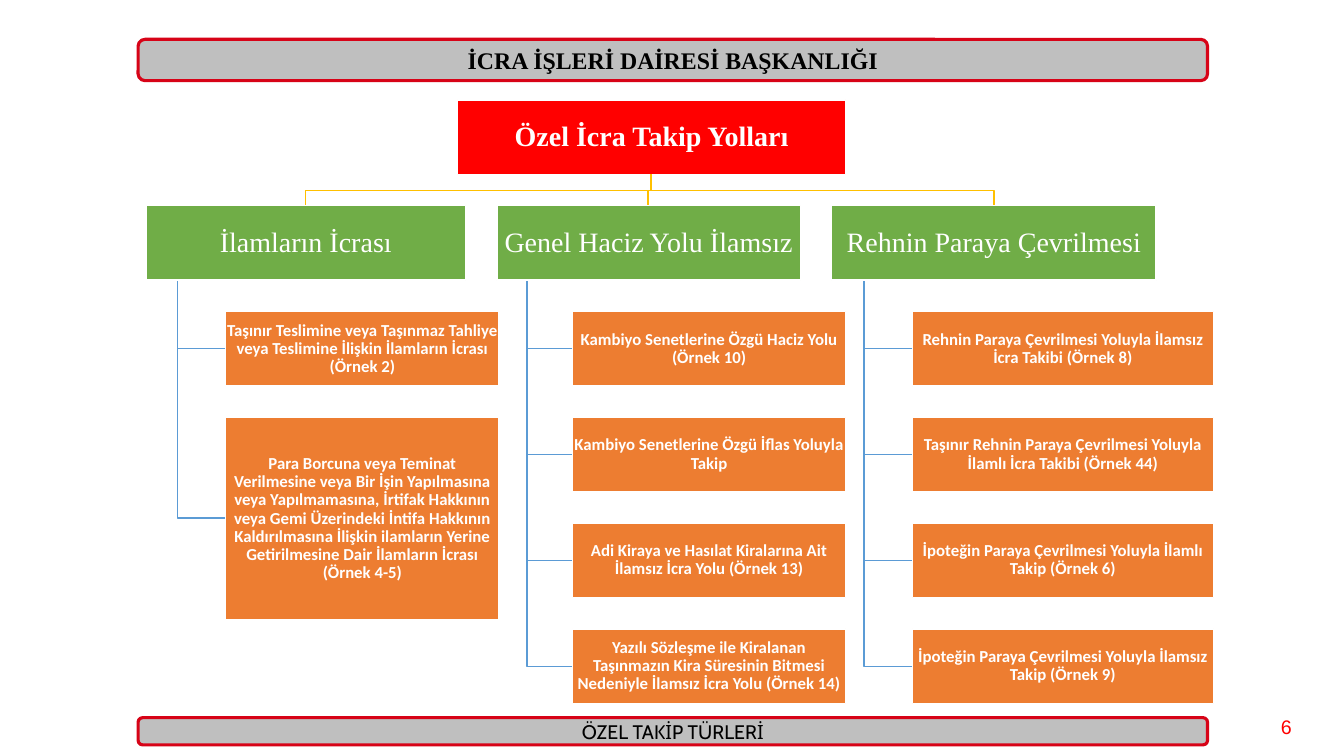
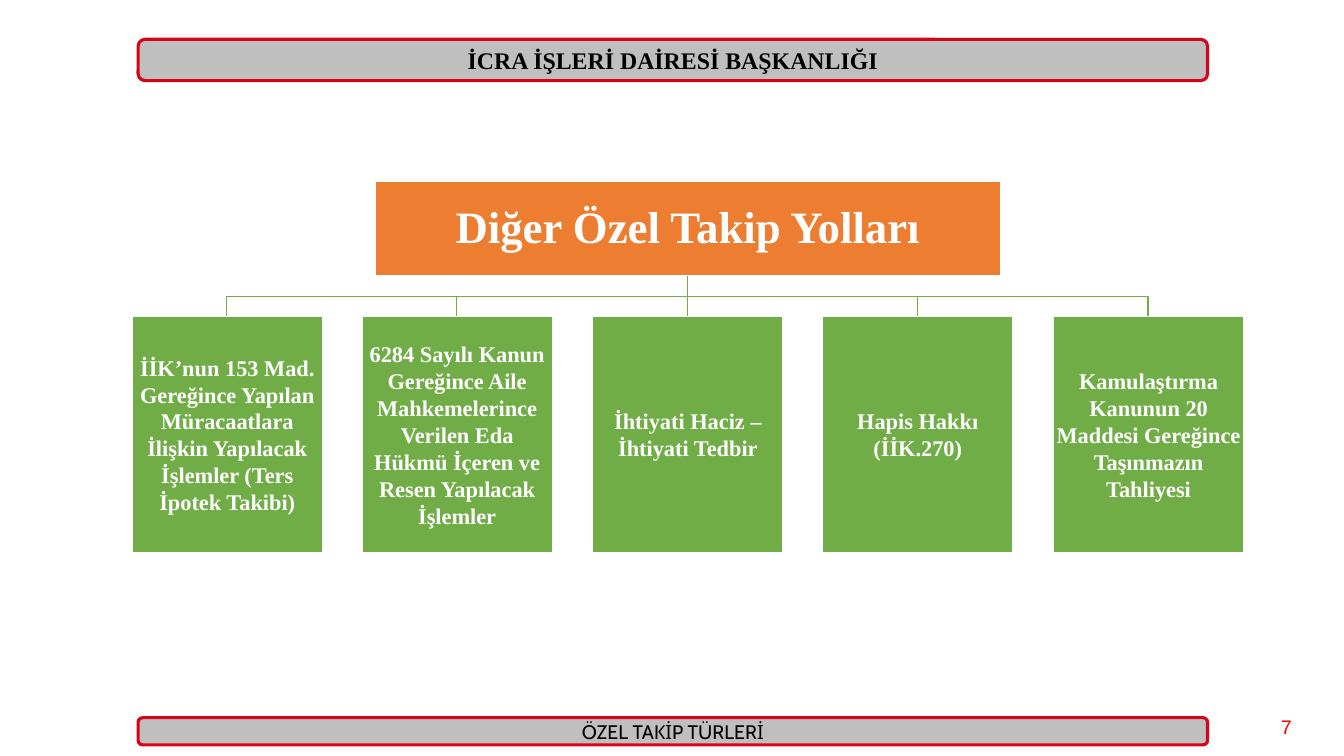
from lxml import etree
from pptx import Presentation
from pptx.dml.color import RGBColor
from pptx.enum.shapes import MSO_CONNECTOR, MSO_SHAPE
from pptx.enum.text import MSO_ANCHOR, MSO_AUTO_SIZE, PP_ALIGN
from pptx.oxml.ns import qn
from pptx.util import Emu, Pt

RECT, ROUND = MSO_SHAPE.RECTANGLE, MSO_SHAPE.ROUNDED_RECTANGLE
STRAIGHT = MSO_CONNECTOR.STRAIGHT
TOP, MIDDLE = MSO_ANCHOR.TOP, MSO_ANCHOR.MIDDLE
LEFT, CENTER = PP_ALIGN.LEFT, PP_ALIGN.CENTER
NO_FIT = MSO_AUTO_SIZE.NONE

COLORS = {
    "white": "FFFFFF", "black": "000000", "gray": "BFBFBF",
    "crimson": "D70317", "red": "FF0000", "green": "70AD47",
    "orange": "ED7D31", "gold": "FFC000", "blue": "5B9BD5",
}
SERIF, SANS = "Times New Roman", "Calibri"
SLIDE_W, SLIDE_H = Emu(12192000), Emu(6858000)

BANDS = [
    ("İCRA İŞLERİ DAİRESİ BAŞKANLIĞI", (137, 39, 1061, 41), SERIF, 17, True),
    ("ÖZEL TAKİP TÜRLERİ", (137, 712, 1061, 27), "Cabin", 14, False),
]

METHODS_TITLE = "Özel İcra Takip Yolları"
METHODS_ROOT = (454, 99, 385, 74)
HEAD_Y, ROW_H, ROW_GAP = 204, 74, 31
TALL_H = 201
METHODS = [
    {"head": "İlamların İcrası", "x": 145, "w": 317, "leaf_x": 224, "leaf_w": 271, "leaves": [
        ("Taşınır Teslimine veya Taşınmaz Tahliye veya Teslimine İlişkin "
         "İlamların İcrası (Örnek 2)", ROW_H),
        ("Para Borcuna veya Teminat Verilmesine veya Bir İşin Yapılmasına veya "
         "Yapılmamasına, İrtifak Hakkının veya Gemi Üzerindeki İntifa Hakkının "
         "Kaldırılmasına İlişkin ilamların Yerine Getirilmesine Dair İlamların "
         "İcrası (Örnek 4-5)", TALL_H),
    ]},
    {"head": "Genel Haciz Yolu İlamsız", "x": 493, "w": 301, "leaf_x": 568, "leaf_w": 271, "leaves": [
        ("Kambiyo Senetlerine Özgü Haciz Yolu (Örnek 10)", ROW_H),
        ("Kambiyo Senetlerine Özgü İflas Yoluyla Takip", ROW_H),
        ("Adi Kiraya ve Hasılat Kiralarına Ait İlamsız İcra Yolu (Örnek 13)", ROW_H),
        ("Yazılı Sözleşme ile Kiralanan Taşınmazın Kira Süresinin Bitmesi "
         "Nedeniyle İlamsız İcra Yolu (Örnek 14)", ROW_H),
    ]},
    {"head": "Rehnin Paraya Çevrilmesi", "x": 825, "w": 322, "leaf_x": 905, "leaf_w": 299, "leaves": [
        ("Rehnin Paraya Çevrilmesi Yoluyla İlamsız İcra Takibi (Örnek 8)", ROW_H),
        ("Taşınır Rehnin Paraya Çevrilmesi Yoluyla İlamlı İcra Takibi (Örnek 44)", ROW_H),
        ("İpoteğin Paraya Çevrilmesi Yoluyla İlamlı Takip (Örnek 6)", ROW_H),
        ("İpoteğin Paraya Çevrilmesi Yoluyla İlamsız Takip (Örnek 9)", ROW_H),
    ]},
]

OTHERS_TITLE = "Diğer Özel Takip Yolları"
OTHERS_ROOT = (372, 180, 621, 94)
OTHERS_X, OTHERS_Y, OTHERS_W, OTHERS_H, OTHERS_SPAN = 131, 314, 189, 234, 914
OTHERS = [
    "İİK’nun 153 Mad. Gereğince Yapılan Müracaatlara İlişkin Yapılacak "
    "İşlemler (Ters İpotek Takibi)",
    "6284 Sayılı Kanun Gereğince Aile Mahkemelerince Verilen Eda Hükmü İçeren "
    "ve Resen Yapılacak İşlemler",
    "İhtiyati Haciz – İhtiyati Tedbir",
    "Hapis Hakkı (İİK.270)",
    "Kamulaştırma Kanunun 20 Maddesi Gereğince Taşınmazın Tahliyesi",
]


def px(n):
    return Emu(n * 9144)


def rgb(name):
    return RGBColor.from_string(COLORS[name])


def paint(sp, fill, line, width):
    sp.fill.solid()
    sp.fill.fore_color.rgb = rgb(fill)
    sp.line.color.rgb = rgb(line)
    sp.line.width = Pt(width)


def write(sp, text, font, size, color, bold=False, spacing=1.0, align=CENTER, anchor=MIDDLE):
    tf = sp.text_frame
    tf.word_wrap = True
    tf.auto_size = NO_FIT
    tf.vertical_anchor = anchor
    p = tf.paragraphs[0]
    p.text = text
    p.alignment = align
    p.line_spacing = spacing
    p.font.name, p.font.size, p.font.bold = font, Pt(size), bold
    p.font.color.rgb = rgb(color)


def style_node(sp, text, fill, font, size, bold, spacing=0.9):
    paint(sp, fill, "white", 1)
    write(sp, text, font, size, "white", bold, spacing)
    tf = sp.text_frame
    tf.margin_left = tf.margin_right = tf.margin_top = tf.margin_bottom = px(1)


def add_node(s, box, *style):
    sp = s.shapes.add_shape(RECT, *map(px, box))
    sp.shadow.inherit = False
    style_node(sp, *style)


def add_bent_line(s, points, color):
    fb = s.shapes.build_freeform(*points[0], scale=px(1))
    fb.add_line_segments(points[1:], close=False)
    sp = fb.convert_to_shape()
    sp.shadow.inherit = False
    sp.fill.background()
    sp.line.color.rgb = rgb(color)
    sp.line.width = Pt(1)


def add_straight_line(s, x, top, bottom, color):
    c = s.shapes.add_connector(STRAIGHT, px(x), px(top), px(x), px(bottom))
    c.line.color.rgb = rgb(color)
    c.line.width = Pt(1)
    etree.SubElement(c.element.spPr, qn("a:effectLst"))


def add_branches(s, root, centers, bottom, color):
    x, y, w, h = root
    trunk, top = x + w // 2, y + h
    bus = (top + bottom + 1) // 2
    for cx in centers:
        if cx == trunk:
            add_straight_line(s, cx, top, bottom, color)
        else:
            add_bent_line(s, [(trunk, top), (trunk, bus), (cx, bus), (cx, bottom)], color)


def add_bands(s, layout):
    for ph in list(layout.placeholders)[1:]:
        layout.shapes.element.remove(ph.element)
    for text, box, font, size, bold in BANDS:
        sp = s.shapes.add_shape(ROUND, *map(px, box))
        sp.shadow.inherit = False
        paint(sp, "gray", "crimson", 2.25)
        write(sp, text, font, size, "black", bold)
        layout.shapes.element.append(sp.element)


def add_slide(prs, layout, number, title, box, fill, size):
    s = prs.slides.add_slide(layout)
    t = s.shapes.title
    t.left, t.top, t.width, t.height = map(px, box)
    style_node(t, title, fill, SERIF, size, True)
    num = s.shapes.add_textbox(*map(px, (1261, 704, 45, 27)))
    write(num, str(number), "Arial", 14, "red", align=LEFT, anchor=TOP)
    return s


def draw_methods(s):
    centers = [m["x"] + m["w"] // 2 for m in METHODS]
    add_branches(s, METHODS_ROOT, centers, HEAD_Y, "gold")
    for m in METHODS:
        spine, top = m["x"] + m["w"] // 10, HEAD_Y + ROW_H
        y = top + ROW_GAP
        for text, h in m["leaves"]:
            mid = y + h // 2
            add_bent_line(s, [(spine, top), (spine, mid), (m["leaf_x"], mid)], "blue")
            add_node(s, (m["leaf_x"], y, m["leaf_w"], h), text, "orange", SANS, 12, True)
            y += h + ROW_GAP
        add_node(s, (m["x"], HEAD_Y, m["w"], ROW_H), m["head"], "green", SERIF, 20, False)


def draw_others(s):
    xs = [OTHERS_X + OTHERS_SPAN * i // (len(OTHERS) - 1) for i in range(len(OTHERS))]
    centers = [x + OTHERS_W // 2 for x in xs]
    add_branches(s, OTHERS_ROOT, centers, OTHERS_Y, "green")
    for x, text in zip(xs, OTHERS):
        add_node(s, (x, OTHERS_Y, OTHERS_W, OTHERS_H), text, "green", SERIF, 16, True, 1.0)


def main():
    prs = Presentation()
    prs.slide_width, prs.slide_height = SLIDE_W, SLIDE_H
    layout = prs.slide_layouts[5]
    s = add_slide(prs, layout, 6, METHODS_TITLE, METHODS_ROOT, "red", 20)
    add_bands(s, layout)
    draw_methods(s)
    s = add_slide(prs, layout, 7, OTHERS_TITLE, OTHERS_ROOT, "orange", 32)
    draw_others(s)
    prs.save("out.pptx")


if __name__ == "__main__":
    main()
